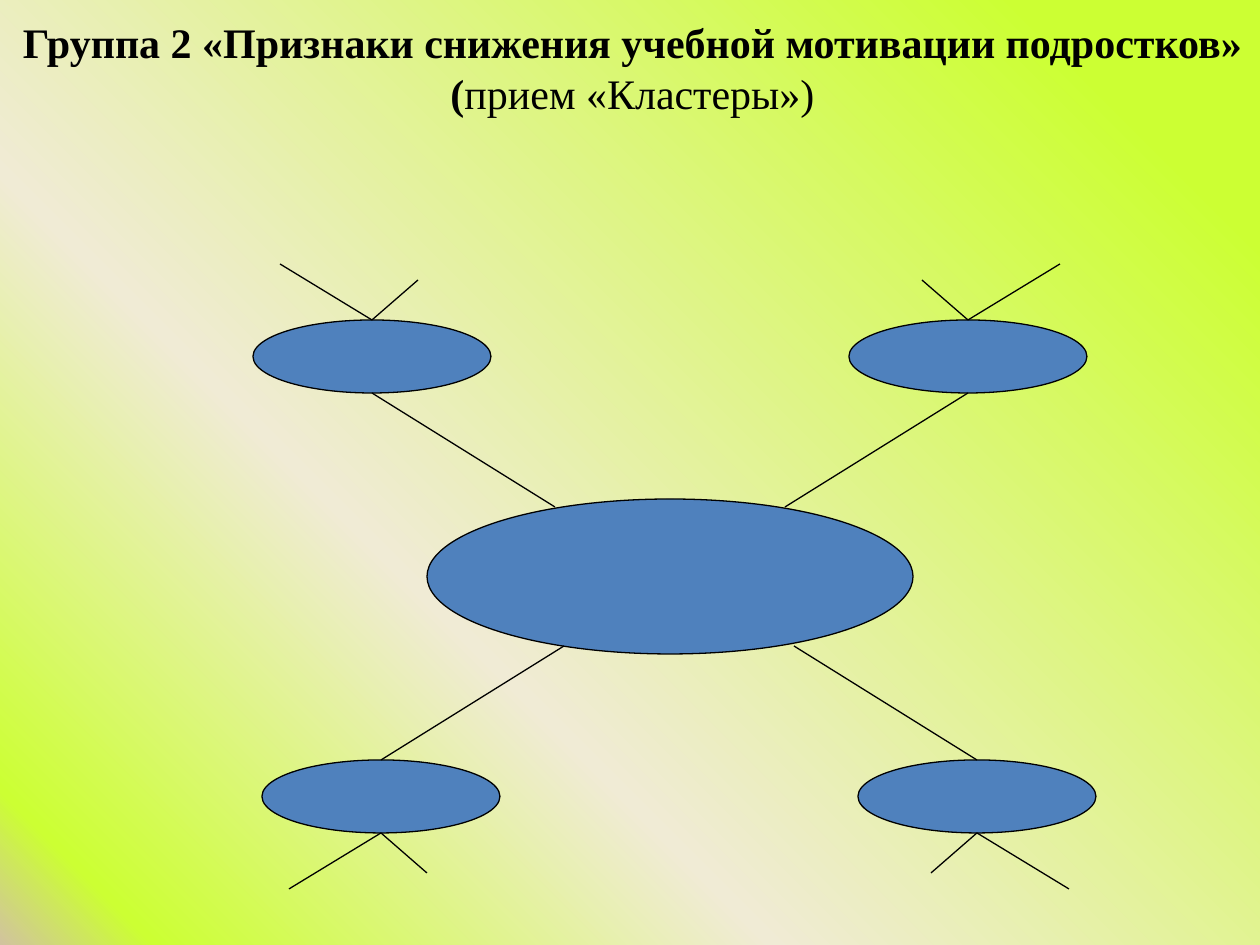
"""Build a cluster diagram slide with a central oval and four branching ovals."""
from copy import deepcopy
from dataclasses import dataclass

from lxml import etree
from pptx import Presentation
from pptx import util as u
from pptx.dml.color import RGBColor
from pptx.enum import shapes, text
from pptx.oxml import ns

PX = u.Inches(1) // 126


@dataclass(frozen=True)
class Theme:
    font: str = "Times New Roman"
    title_size: float = 24
    title_leading: float = 29.3
    line_width: float = 0.75
    ink: str = "000000"
    oval: str = "4F81BD"
    gradient: tuple = ((0.11, "CCFF33"), (0.65, "F0EBD5"), (0.93, "CCFF33"), (1, "D1C39F"))
    gradient_angle: int = 225


class ClusterSlide:
    def __init__(self, page, theme):
        self.page = page
        self.theme = theme

    def background(self):
        fill = self.page.background.fill
        fill.gradient()
        fill.gradient_angle = self.theme.gradient_angle
        stops = self.page.element.find(f".//{ns.qn('a:gsLst')}")
        while len(stops) < len(self.theme.gradient):
            stops.append(deepcopy(stops[0]))
        for stop, (position, color) in zip(fill.gradient_stops, self.theme.gradient):
            stop.position = position
            stop.color.rgb = RGBColor.from_string(color)

    def title(self, bold_words, plain_words, left, top, width, height, bottom_inset):
        box = self.page.shapes.add_textbox(left * PX, top * PX, width * PX, height * PX)
        frame = box.text_frame
        frame.word_wrap = True
        frame.auto_size = text.MSO_AUTO_SIZE.NONE
        frame.vertical_anchor = text.MSO_ANCHOR.MIDDLE
        frame.margin_top = 0
        frame.margin_bottom = bottom_inset * PX
        para = frame.paragraphs[0]
        para.text = bold_words
        para.alignment = text.PP_ALIGN.CENTER
        para.line_spacing = u.Pt(self.theme.title_leading)
        bold_count = len(para.runs)
        para.add_run().text = plain_words
        for index, span in enumerate(para.runs):
            span.font.name = self.theme.font
            span.font.size = u.Pt(self.theme.title_size)
            span.font.bold = index < bold_count
            span.font.color.rgb = RGBColor.from_string(self.theme.ink)

    def stroke(self, line):
        line.color.rgb = RGBColor.from_string(self.theme.ink)
        line.width = u.Pt(self.theme.line_width)

    def oval(self, parent, left, top, width, height):
        oval = parent.add_shape(
            shapes.MSO_SHAPE.OVAL, left * PX, top * PX, width * PX, height * PX)
        oval.shadow.inherit = False
        oval.fill.solid()
        oval.fill.fore_color.rgb = RGBColor.from_string(self.theme.oval)
        self.stroke(oval.line)

    def line(self, parent, start_x, start_y, end_x, end_y):
        line = parent.add_connector(
            shapes.MSO_CONNECTOR.STRAIGHT,
            start_x * PX, start_y * PX, end_x * PX, end_y * PX)
        self.stroke(line.line)
        properties = line.element.find(ns.qn("p:spPr"))
        etree.SubElement(properties, ns.qn("a:effectLst"))

    def branch(self, center_x, top, side, rise):
        width, height = 238, 73
        outer, inner = (top, top + height) if rise < 0 else (top + height, top)
        group = self.page.shapes.add_group_shape().shapes
        self.oval(group, center_x - width // 2, top, width, height)
        self.line(group, center_x + 92 * side, outer + 56 * rise, center_x, outer)
        self.line(group, center_x, outer, center_x - 46 * side, outer + 40 * rise)
        self.line(group, center_x, inner, center_x - 183 * side, inner - 114 * rise)


def main():
    deck = Presentation()
    deck.slide_width, deck.slide_height = u.Inches(10), u.Inches(7.5)
    slide = ClusterSlide(deck.slides.add_slide(deck.slide_layouts[6]), Theme())
    slide.background()
    slide.title("Группа 2 «Признаки снижения учебной мотивации подростков»\v(",
                "прием «Кластеры»)", 5, 38, 1255, 157, bottom_inset=100)
    slide.oval(slide.page.shapes, 427, 499, 486, 155)
    for left_x, top, rise in ((381, 760, 1), (372, 320, -1)):
        for center_x, side in ((left_x, -1), (left_x + 596, 1)):
            slide.branch(center_x, top, side, rise)
    deck.save("out.pptx")


if __name__ == "__main__":
    main()
